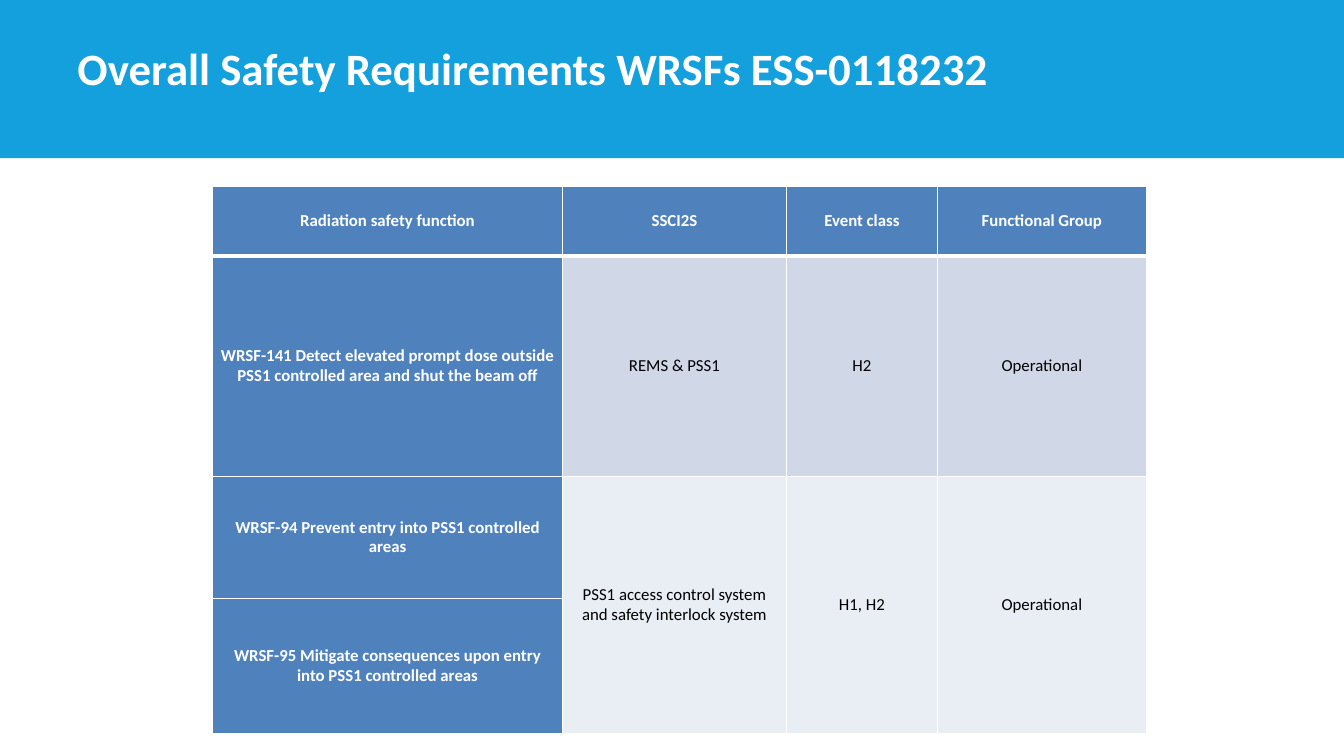
from lxml import etree
from pptx import Presentation
from pptx.dml.color import RGBColor
from pptx.enum.shapes import MSO_SHAPE
from pptx.enum.text import MSO_ANCHOR, PP_ALIGN
from pptx.oxml.ns import qn
from pptx.util import Pt

PX = 9144
RECT = MSO_SHAPE.RECTANGLE
MIDDLE, BOTTOM = MSO_ANCHOR.MIDDLE, MSO_ANCHOR.BOTTOM
CENTER = PP_ALIGN.CENTER

WHITE = RGBColor(0xFF, 0xFF, 0xFF)
BLACK = RGBColor(0x00, 0x00, 0x00)
CYAN = RGBColor(0x13, 0xA0, 0xDD)
BLUE = RGBColor(0x4F, 0x81, 0xBD)
BAND_DARK = RGBColor(0xD0, 0xD8, 0xE8)
BAND_LIGHT = RGBColor(0xE9, 0xED, 0xF4)

TITLE = {"name": "Calibri", "size": Pt(32), "bold": True}
HEADING = {"name": "Calibri", "size": Pt(12), "bold": True}
BODY = {"name": "Calibri", "size": Pt(12), "bold": False}
CELL_PARAGRAPH = {"alignment": CENTER, "line_spacing": Pt(14), "space_after": Pt(12)}
CELL_BOX = {"vertical_anchor": MIDDLE, "margin_left": 7 * PX, "margin_right": 7 * PX,
            "margin_top": 0, "margin_bottom": 0}

COLUMNS = [347, 222, 150, 207]
ROWS = [69, 219, 121, 134]
BANDS = [BLUE, BAND_DARK, BAND_LIGHT, BAND_LIGHT]
FUNCTIONS = [
    ["Radiation safety function", "SSCI2S", "Event class", "Functional Group"],
    ["WRSF-141 Detect elevated prompt dose outside PSS1 controlled area and shut the beam off",
     "REMS & PSS1", "H2", "Operational"],
    ["WRSF-94 Prevent entry into PSS1 controlled areas",
     "PSS1 access control system and safety interlock system", "H1, H2", "Operational"],
    ["WRSF-95 Mitigate consequences upon entry into PSS1 controlled areas", "", "", ""],
]


def apply(target, values):
    for name, value in values.items():
        setattr(target, name, value)


def write(p, text, font, color):
    r = p.add_run()
    r.text = text
    apply(r.font, font)
    r.font.color.rgb = color


def add_borders(cell, widths):
    tcPr = cell._tc.get_or_add_tcPr()
    for side, width in widths.items():
        ln = etree.SubElement(tcPr, qn(f"a:ln{side}"), w=str(Pt(width)))
        fill = etree.SubElement(ln, qn("a:solidFill"))
        etree.SubElement(fill, qn("a:srgbClr"), val=str(WHITE))


def add_header(slide, left, top, width, height, title):
    sp = slide.shapes.add_shape(RECT, left * PX, top * PX, width * PX, height * PX)
    sp.shadow.inherit = False
    sp.fill.solid()
    sp.fill.fore_color.rgb = CYAN
    sp.line.fill.background()
    box = slide.shapes.add_textbox((left + 67) * PX, (top + 38) * PX, 1041 * PX, 61 * PX)
    tf = box.text_frame
    apply(tf, {"word_wrap": True, "vertical_anchor": BOTTOM})
    write(tf.paragraphs[0], title, TITLE, WHITE)


def add_functions_table(slide, left, top):
    frame = slide.shapes.add_table(len(ROWS), len(COLUMNS), left * PX, top * PX,
                                   sum(COLUMNS) * PX, sum(ROWS) * PX)
    table = frame.table
    for column, width in zip(table.columns, COLUMNS):
        column.width = width * PX
    for row, height in zip(table.rows, ROWS):
        row.height = height * PX
    for i, texts in enumerate(FUNCTIONS):
        for j, text in enumerate(texts):
            cell = table.cell(i, j)
            heading = i == 0 or j == 0
            apply(cell, CELL_BOX)
            add_borders(cell, {"L": 1, "R": 1, "T": 3 if i == 1 else 1, "B": 3 if i == 0 else 1})
            cell.fill.solid()
            cell.fill.fore_color.rgb = BLUE if heading else BANDS[i]
            if text:
                p = cell.text_frame.paragraphs[0]
                apply(p, CELL_PARAGRAPH)
                write(p, text, HEADING if heading else BODY, WHITE if heading else BLACK)
    for j in range(1, len(COLUMNS)):
        table.cell(2, j).merge(table.cell(3, j))


def main():
    prs = Presentation()
    prs.slide_width, prs.slide_height = 1333 * PX, 750 * PX
    slide = prs.slides.add_slide(prs.slide_layouts[6])
    add_header(slide, 0, 0, 1333, 157, "Overall Safety Requirements WRSFs ESS-0118232")
    add_functions_table(slide, 211, 185)
    prs.save("out.pptx")


if __name__ == "__main__":
    main()
